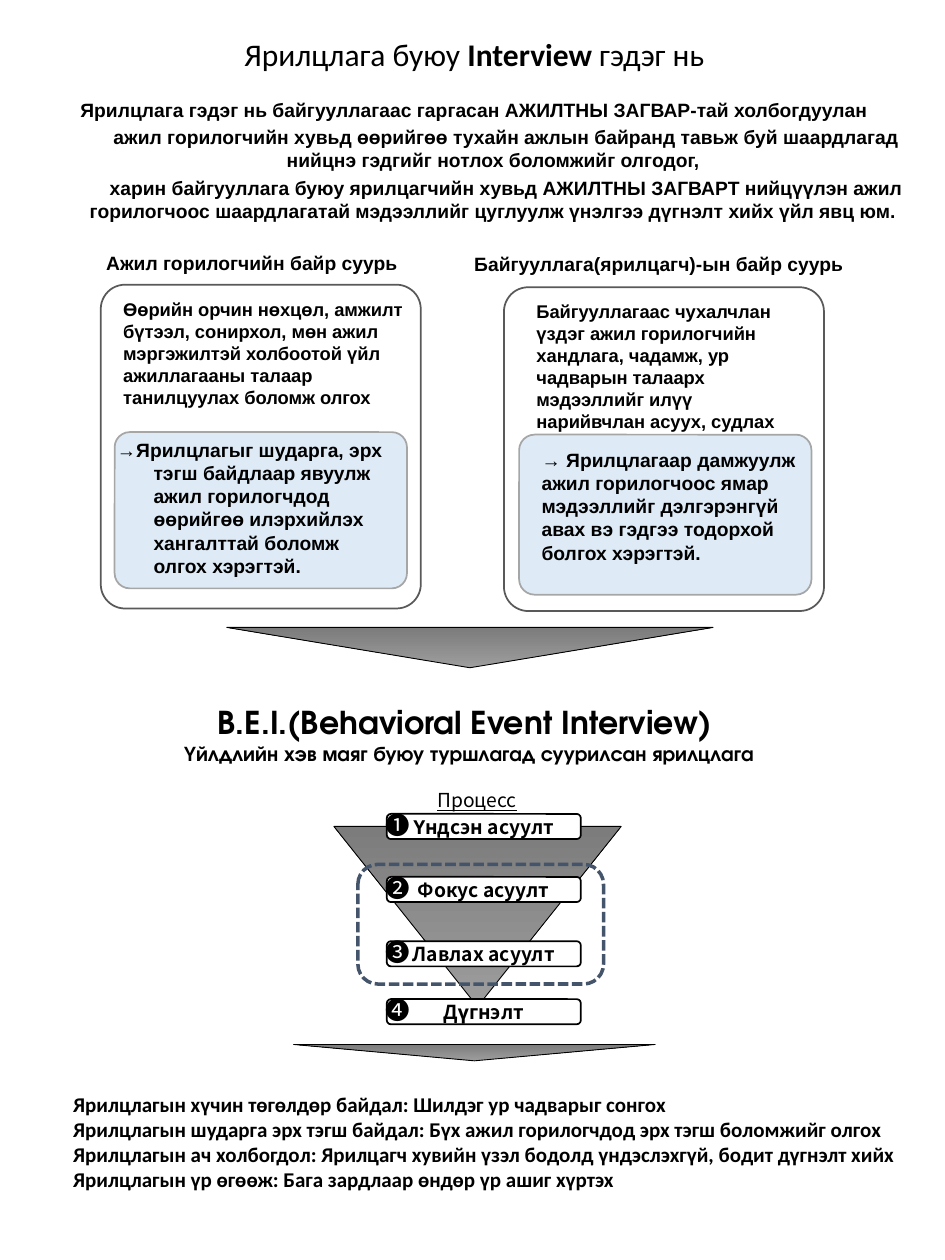
from dataclasses import dataclass
from typing import NamedTuple

from lxml import etree
from pptx import Presentation
from pptx.dml.color import RGBColor
from pptx.enum.dml import MSO_LINE
from pptx.enum.shapes import MSO_SHAPE
from pptx.enum.text import MSO_ANCHOR, MSO_AUTO_SIZE, PP_ALIGN
from pptx.oxml.ns import qn
from pptx.util import Pt

ROUND, TRIANGLE = MSO_SHAPE.ROUNDED_RECTANGLE, MSO_SHAPE.ISOSCELES_TRIANGLE
LEFT, CENTER = PP_ALIGN.LEFT, PP_ALIGN.CENTER
TOP, MIDDLE = MSO_ANCHOR.TOP, MSO_ANCHOR.MIDDLE
GROW, FIXED = MSO_AUTO_SIZE.SHAPE_TO_FIT_TEXT, MSO_AUTO_SIZE.NONE
DASH = MSO_LINE.SQUARE_DOT

PX = 9144  # EMU per px, 100 px to the inch
COLORS = {"text": "000000", "white": "FFFFFF", "frame": "595959", "note": "DEEBF7",
          "note_line": "A6A6A6", "focus": "44546A", "light": "9D9D9D", "dark": "7C7C7C"}
ARIAL, CALIBRI = "Arial", "Calibri"
NOTO, ADVENTOR = "Noto Sans CJK KR", "TeX Gyre Adventor"


class Box(NamedTuple):
    x: int
    y: int
    w: int
    h: int

    def emu(self) -> list[int]:
        return [v * PX for v in self]


@dataclass
class Run:
    text: str
    size: float = 11
    font: str = ARIAL
    bold: bool = True
    underline: bool = False


@dataclass
class Para:
    runs: list[Run]
    align: PP_ALIGN = LEFT
    margin: int = 0
    indent: int = 0
    before: float = 0
    spacing: float = 1.0


@dataclass
class Position:
    heading: str
    heading_box: Box
    frame: Box
    summary: str
    summary_box: Box
    note_frame: Box
    note: Para
    note_box: Box


def rgb(name: str) -> RGBColor:
    return RGBColor.from_string(COLORS[name])


def write(shape, paras: list[Para], wrap: bool = True, anchor=TOP, fit=GROW) -> None:
    tf = shape.text_frame
    tf.word_wrap, tf.vertical_anchor, tf.auto_size = wrap, anchor, fit
    for i, para in enumerate(paras):
        p = tf.paragraphs[0] if i == 0 else tf.add_paragraph()
        pPr = p._p.get_or_add_pPr()
        pPr.set("marL", str(para.margin * PX))
        pPr.set("indent", str(para.indent * PX))
        etree.SubElement(pPr, qn("a:buNone"))
        p.alignment, p.line_spacing = para.align, para.spacing
        p.space_before = Pt(para.before)
        for run in para.runs:
            r = p.add_run()
            r.text = run.text
            f = r.font
            f.name, f.size, f.bold = run.font, Pt(run.size), run.bold
            f.underline = run.underline
            f.color.rgb = rgb("text")
            if run.font == NOTO:
                etree.SubElement(r._r.get_or_add_rPr(), qn("a:ea"), typeface=NOTO)


def add_text(s, box: Box, paras: list[Para], wrap: bool = True) -> None:
    write(s.shapes.add_textbox(*box.emu()), paras, wrap)


def add_round(s, box: Box, fill: str | None, line: str, width: float = 1,
              adj: float = 0.1667):
    sp = s.shapes.add_shape(ROUND, *box.emu())
    sp.shadow.inherit = False
    sp.adjustments[0] = adj
    if fill:
        sp.fill.solid()
        sp.fill.fore_color.rgb = rgb(fill)
    else:
        sp.fill.background()
    sp.line.color.rgb = rgb(line)
    sp.line.width = Pt(width)
    return sp


def add_funnel(s, box: Box) -> None:
    """Downward triangle, dark at its top edge."""
    sp = s.shapes.add_shape(TRIANGLE, *box.emu())
    sp.shadow.inherit = False
    sp._element.spPr.xfrm.set("flipV", "1")
    sp.fill.gradient()
    sp.fill.gradient_angle = 270
    for stop, name in zip(sp.fill.gradient_stops, ("light", "dark")):
        stop.color.rgb = rgb(name)
    sp.line.color.rgb = rgb("text")
    sp.line.width = Pt(0.5)


def add_position(s, pos: Position) -> None:
    add_round(s, pos.frame, "white", "frame", adj=0.076)
    add_text(s, pos.summary_box, [Para([Run(pos.summary, 10.5)])])
    add_round(s, pos.note_frame, "note", "note_line", adj=0.097)
    add_text(s, pos.note_box, [pos.note])
    add_text(s, pos.heading_box, [Para([Run(pos.heading)], CENTER, 19, -19, spacing=1.3)])


INTRO = [
    Para([Run("Ярилцлага гэдэг нь байгууллагаас гаргасан АЖИЛТНЫ ЗАГВАР-тай холбогдуулан")],
         CENTER, 44, -54),
    Para([Run("ажил горилогчийн хувьд өөрийгөө тухайн ажлын байранд тавьж буй шаардлагад "
              "нийцнэ гэдгийг нотлох боломжийг олгодог,")], CENTER, 30, 21, 2.5),
    Para([Run("харин байгууллага буюу ярилцагчийн хувьд АЖИЛТНЫ ЗАГВАРТ нийцүүлэн ажил "
              "горилогчоос шаардлагатай мэдээллийг цуглуулж үнэлгээ дүгнэлт хийх үйл явц юм.")],
         CENTER, 30, 21, 2.5),
]
POSITIONS = [
    Position("Ажил горилогчийн байр суурь", Box(66, 189, 268, 34), Box(80, 226, 254, 257),
             "Өөрийн орчин нөхцөл, амжилт бүтээл, сонирхол, мөн ажил мэргэжилтэй холбоотой "
             "үйл ажиллагааны талаар танилцуулах боломж олгох", Box(88, 232, 247, 98),
             Box(91, 343, 232, 124),
             Para([Run("→Ярилцлагыг шударга, эрх тэгш байдлаар явуулж ажил горилогчдод "
                       "өөрийгөө илэрхийлэх хангалттай боломж олгох хэрэгтэй.")],
                  margin=29, indent=-29), Box(83, 343, 238, 121)),
    Position("Байгууллага(ярилцагч)-ын байр суурь", Box(358, 190, 330, 34),
             Box(400, 228, 254, 257),
             "Байгууллагаас чухалчлан үздэг ажил горилогчийн хандлага, чадамж, ур чадварын "
             "талаарх мэдээллийг илүү нарийвчлан асуух, судлах", Box(416, 233, 223, 116),
             Box(412, 345, 232, 127),
             Para([Run("→ Ярилцлагаар дамжуулж ажил горилогчоос ямар мэдээллийг дэлгэрэнгүй "
                       "авах вэ гэдгээ тодорхой болгох хэрэгтэй.")]), Box(420, 351, 230, 103)),
]
STEPS = [("❶", "Үндсэн асуулт", 646), ("❷", "Фокус асуулт", 696),
         ("❸", "Лавлах асуулт", 747), ("❹", "Дүгнэлт", 793)]
BENEFITS = [
    "Ярилцлагын хүчин төгөлдөр байдал: Шилдэг ур чадварыг сонгох",
    "Ярилцлагын шударга эрх тэгш байдал: Бүх ажил горилогчдод эрх тэгш боломжийг олгох",
    "Ярилцлагын ач холбогдол: Ярилцагч хувийн үзэл бодолд үндэслэхгүй, бодит дүгнэлт хийх",
    "Ярилцлагын үр өгөөж: Бага зардлаар өндөр үр ашиг хүртэх",
]


def main() -> None:
    prs = Presentation()
    prs.slide_width, prs.slide_height = 750 * PX, 1000 * PX
    s = prs.slides.add_slide(prs.slide_layouts[1])

    # Title and closing list
    title, body = s.shapes.title, s.placeholders[1]
    for sp, box in ((title, Box(182, 23, 389, 40)), (body, Box(48, 861, 681, 91))):
        sp.left, sp.top, sp.width, sp.height = box.emu()
    write(title, [Para([Run("Ярилцлага буюу ", 18, CALIBRI, False),
                        Run("Interview ", 18, CALIBRI),
                        Run("гэдэг нь", 18, CALIBRI, False)], CENTER)], wrap=False)
    write(body, [Para([Run(line, 12, CALIBRI)]) for line in BENEFITS])

    # Definition and the two positions
    add_text(s, Box(24, 73, 705, 110), INTRO)
    for pos in POSITIONS:
        add_position(s, pos)
    add_funnel(s, Box(180, 498, 386, 32))

    # Interview method
    add_text(s, Box(115, 553, 515, 61), [
        Para([Run("B.E.I.(Behavioral Event Interview) ", 18, ADVENTOR)], CENTER),
        Para([Run("Үйлдлийн хэв маяг буюу туршлагад суурилсан ярилцлага", 12, ADVENTOR)],
             CENTER)], wrap=False)

    # Process funnel with numbered steps
    add_funnel(s, Box(265, 656, 228, 143))
    add_text(s, Box(274, 617, 209, 30), [
        Para([Run("Процесс", 11, NOTO, False, True)], CENTER, 19, -19, spacing=1.2)])
    for number, label, y in STEPS:
        sp = add_round(s, Box(307, y, 154, 20), "white", "text")
        write(sp, [Para([Run(label, 11, NOTO)], CENTER)], anchor=MIDDLE, fit=FIXED)
        add_text(s, Box(296, y - 8, 42, 12), [Para([Run(number, 14, NOTO, False)])])
    focus = add_round(s, Box(284, 686, 195, 95), None, "focus", 2)
    focus.line.dash_style = DASH
    add_funnel(s, Box(233, 829, 287, 13))

    prs.save("out.pptx")


if __name__ == "__main__":
    main()
